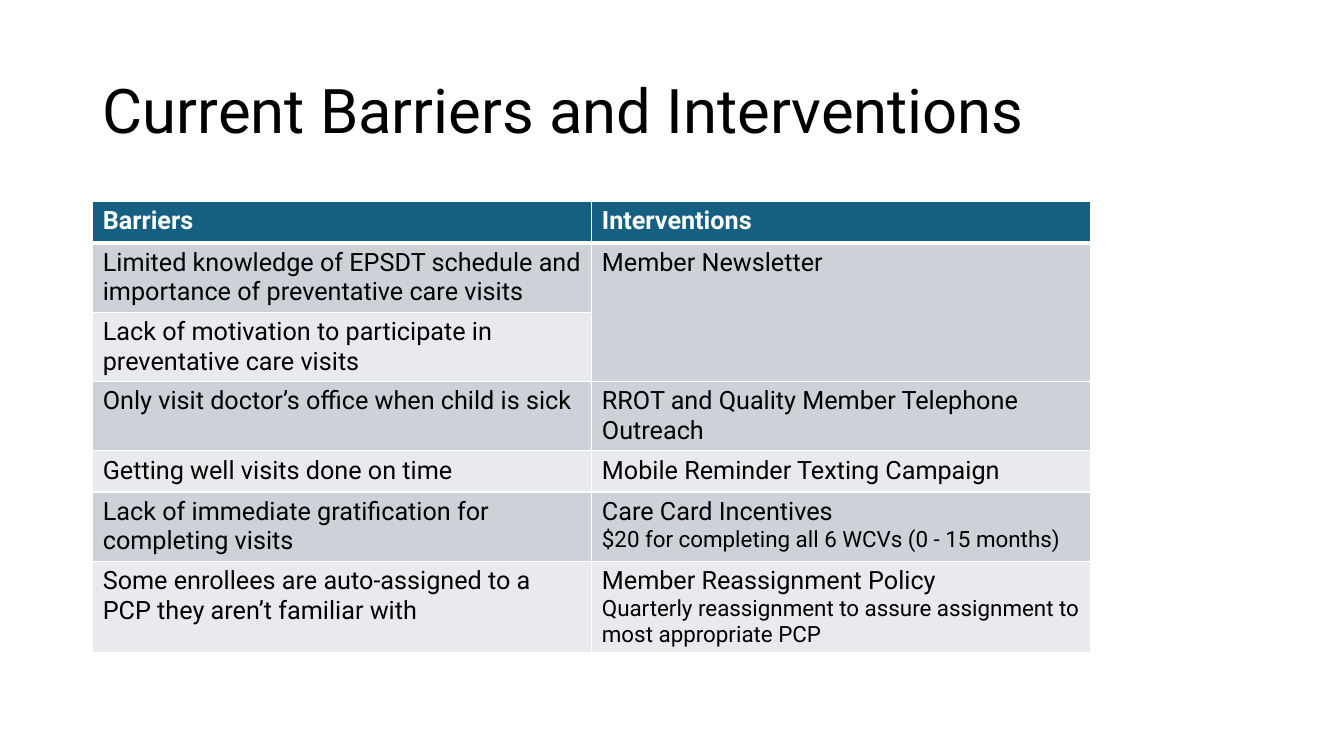
from pptx import Presentation
from pptx.dml.color import RGBColor
from pptx.enum.text import MSO_ANCHOR, PP_ALIGN
from pptx.oxml import parse_xml
from pptx.oxml.ns import nsdecls
from pptx.util import Inches, Pt

MIDDLE = MSO_ANCHOR.MIDDLE
TOP = MSO_ANCHOR.TOP
LEFT = PP_ALIGN.LEFT

BLACK = RGBColor(0x00, 0x00, 0x00)
WHITE = RGBColor(0xFF, 0xFF, 0xFF)
TEAL = RGBColor(0x15, 0x60, 0x82)
GREY = RGBColor(0xCC, 0xD2, 0xD8)
PALE = RGBColor(0xE8, 0xEA, 0xED)

ROWS = [
    (["Barriers"], ["Interventions"]),
    (["Limited knowledge of EPSDT schedule and importance of preventative care visits"],
     ["Member Newsletter"]),
    (["Lack of motivation to participate in preventative care visits"], []),
    (["Only visit doctor’s office when child is sick"],
     ["RROT and Quality Member Telephone Outreach"]),
    (["Getting well visits done on time"],
     ["Mobile Reminder Texting Campaign"]),
    (["Lack of immediate gratification for completing visits"],
     ["Care Card Incentives", "$20 for completing all 6 WCVs (0 - 15 months)"]),
    (["Some enrollees are auto-assigned to a PCP they aren’t familiar with"],
     ["Member Reassignment Policy",
      "Quarterly reassignment to assure assignment to most appropriate PCP"]),
]


class Deck:
    font = "Roboto"

    def __init__(self):
        self.prs = Presentation()
        self.prs.slide_width = Inches(13.33)
        self.prs.slide_height = Inches(7.5)
        self.slide = self.prs.slides.add_slide(self.prs.slide_layouts[5])

    def run(self, para, text, size, color, bold=False):
        run = para.add_run()
        run.text = text
        run.font.name = self.font
        run.font.size = Pt(size)
        run.font.bold = bold
        run.font.color.rgb = color

    def title(self, text, left, top, width, height):
        shape = self.slide.shapes.title
        shape.left, shape.top = Inches(left), Inches(top)
        shape.width, shape.height = Inches(width), Inches(height)
        frame = shape.text_frame
        frame.word_wrap = True
        frame.vertical_anchor = MIDDLE
        para = frame.paragraphs[0]
        para.alignment = LEFT
        para.line_spacing = 0.9
        self.run(para, text, 44, BLACK)

    def border(self, cell, row):
        props = cell._tc.get_or_add_tcPr()
        heavy = {(0, "B"), (1, "T")}
        for spot, side in enumerate("LRTB"):
            width = Pt(3 if (row, side) in heavy else 1)
            props.insert(spot, parse_xml(
                f'<a:ln{side} {nsdecls("a")} w="{width}"><a:solidFill>'
                f'<a:srgbClr val="{WHITE}"/></a:solidFill></a:ln{side}>'))

    def cell(self, cell, lines, row, fill):
        cell.fill.solid()
        cell.fill.fore_color.rgb = fill
        cell.vertical_anchor = TOP
        self.border(cell, row)
        head = row == 0
        frame = cell.text_frame
        for num, line in enumerate(lines):
            para = frame.add_paragraph() if num else frame.paragraphs[0]
            self.run(para, line, 16 if num else 18, WHITE if head else BLACK, head)

    def table(self, rows, left, top, width, height):
        count = len(rows)
        table = self.slide.shapes.add_table(
            count, 2, Inches(left), Inches(top), Inches(width), Inches(height * count)).table
        for row, pair in enumerate(rows):
            table.rows[row].height = Inches(height)
            fill = TEAL if row == 0 else GREY if row % 2 else PALE
            for col, lines in enumerate(pair):
                self.cell(table.cell(row, col), lines, row, fill)
                if not lines:
                    table.cell(row - 1, col).merge(table.cell(row, col))


def main():
    deck = Deck()
    deck.title("Current Barriers and Interventions", 0.92, 0.4, 11.5, 1.45)
    deck.table(ROWS, 0.92, 2, 9.9, 0.41)
    deck.prs.save("out.pptx")


if __name__ == "__main__":
    main()
